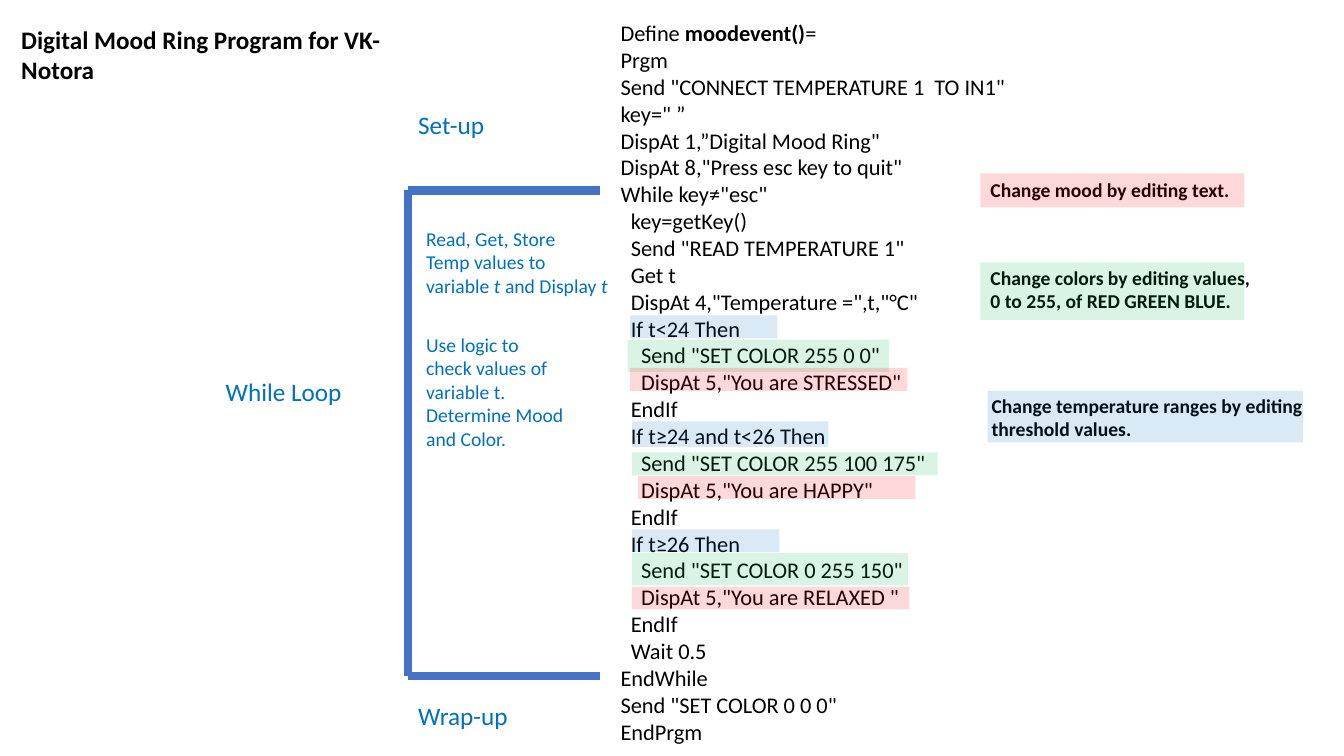
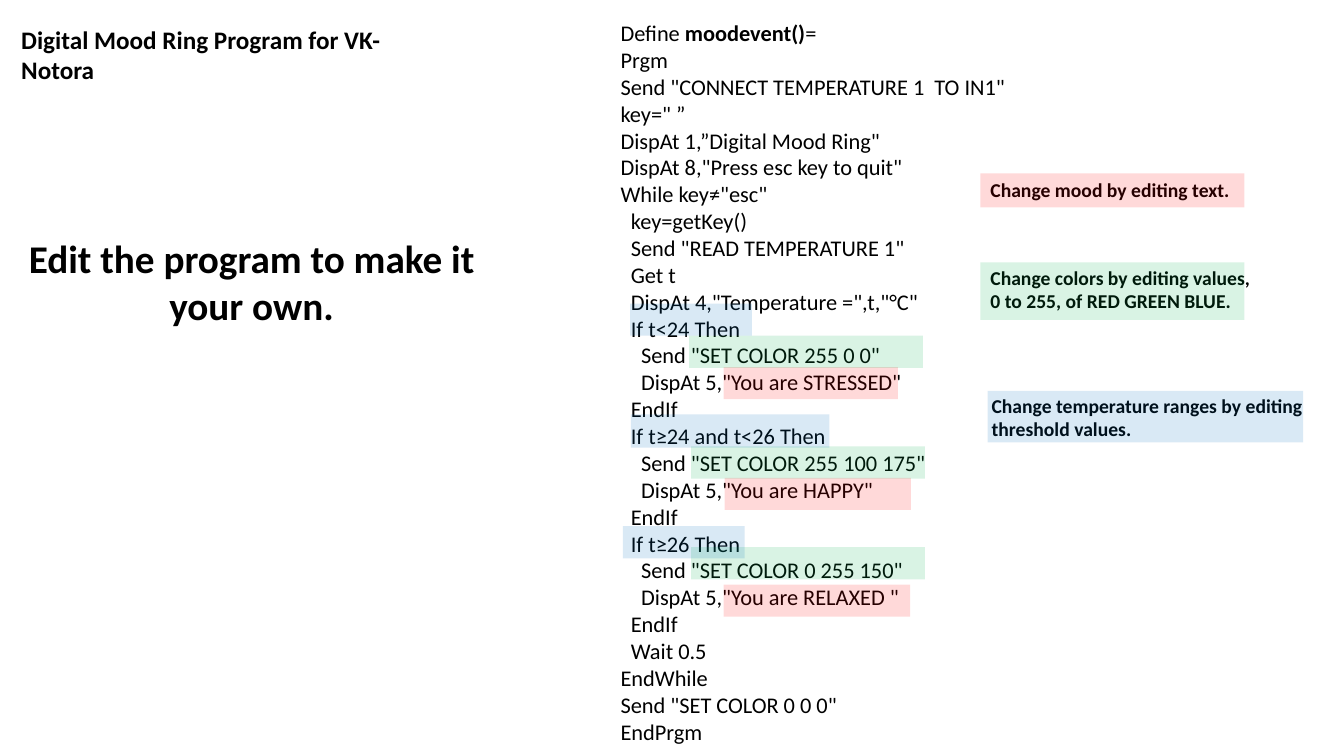
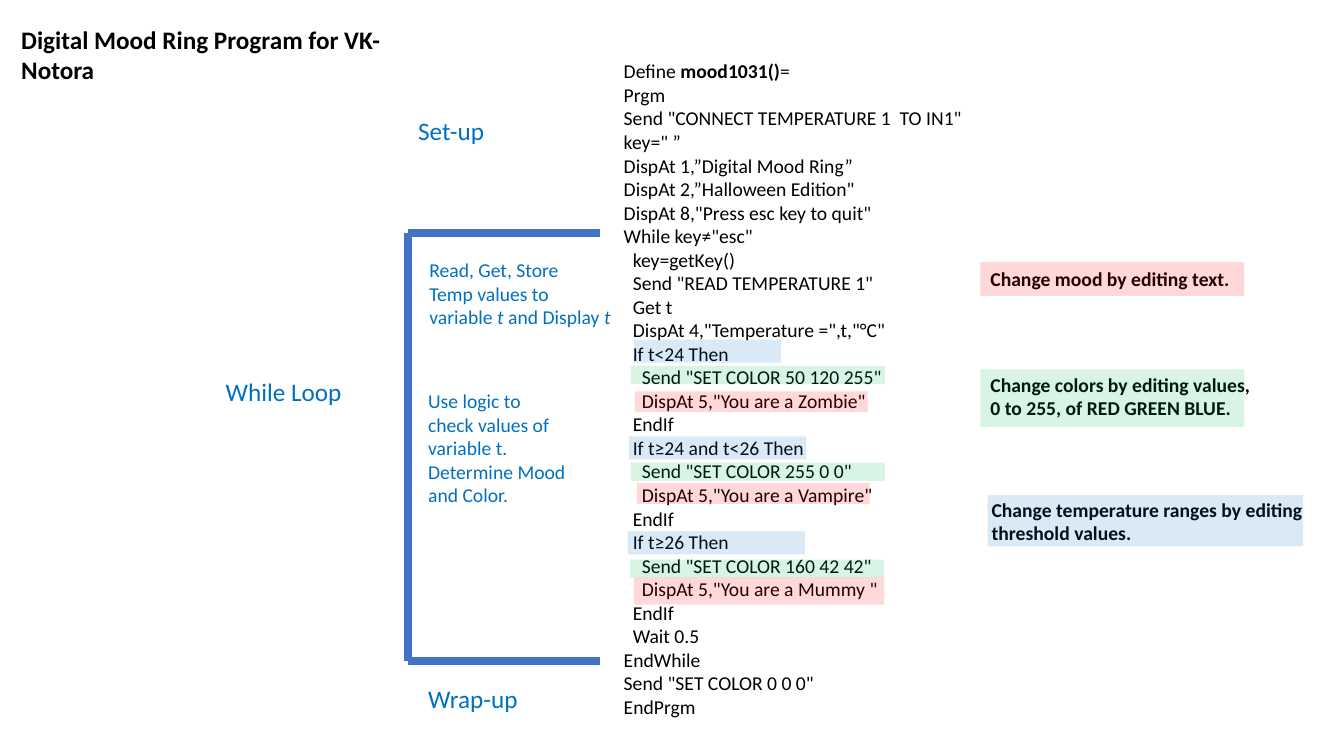
import pptx
import pptx.util
import pptx.dml.color
import pptx.enum.shapes
import pptx.enum.text
import pptx.oxml
import pptx.oxml.ns

Cm, Pt = pptx.util.Cm, pptx.util.Pt
Align = pptx.enum.text.PP_ALIGN

FONT = "Calibri"
BLACK, LABEL_BLUE, BRACKET_BLUE = "000000", "0070C0", "4472C4"
TINTS = {"mood": "FF0000", "color": "00B050", "range": "0070C0"}
TINT_OPACITY = 15
SPACE_WIDTH = 0.23  # width of one space, as a share of the font size

TITLE = "Digital Mood Ring Program for VK-Notora"
READ_TEXT = ["Read, Get, Store",
             ["Temp values to variable ", ("t ", "italic"),
              "and Display ", ("t", "italic")]]
LOGIC_TEXT = ["Use logic to check values of variable t.",
              "Determine Mood and Color."]


def rgb(value):
    return pptx.dml.color.RGBColor.from_string(value)


def write(frame, paragraphs, size=14, color=BLACK, bold=False,
          align=Align.LEFT, wrap=False):
    """Fill a frame; a paragraph is a string or a list of spans, and
    leading spaces become a left indent."""
    frame.word_wrap = wrap
    frame.auto_size = pptx.enum.text.MSO_AUTO_SIZE.NONE
    frame.vertical_anchor = pptx.enum.text.MSO_ANCHOR.TOP
    for number, content in enumerate(paragraphs):
        para = frame.paragraphs[0] if number == 0 else frame.add_paragraph()
        para.alignment = align
        para.space_before = Pt(0)
        if isinstance(content, str):
            text = content.lstrip()
            spaces = len(content) - len(text)
            if spaces:
                margin = Pt(size * SPACE_WIDTH * spaces)
                para._p.get_or_add_pPr().set("marL", str(int(margin)))
            content = [text]
        for part in content:
            text, style = (part, "") if isinstance(part, str) else part
            span = para.add_run()
            span.text = text
            span.font.name = FONT
            span.font.size = Pt(size)
            span.font.color.rgb = rgb(color)
            span.font.bold = bold or style == "bold"
            span.font.italic = style == "italic"


def program(name, displays, moods):
    """Lines of the program, with one If block for each mood."""
    lines = [["Define ", (name, "bold"), "="],
             "Prgm",
             'Send "CONNECT TEMPERATURE 1  TO IN1"',
             'key=" ”',
             *displays,
             'DispAt 8,"Press esc key to quit"',
             'While key≠"esc"',
             "  key=getKey()",
             '  Send "READ TEMPERATURE 1"',
             "  Get t",
             '  DispAt 4,"Temperature =",t,"°C"']
    tests = ["t<24", "t≥24 and t<26", "t≥26"]
    for test, (color, mood) in zip(tests, moods):
        lines += [f"  If {test} Then",
                  f'    Send "SET COLOR {color}"',
                  f'    DispAt 5,"You are {mood}"',
                  "  EndIf"]
    return lines + ["  Wait 0.5", "EndWhile", 'Send "SET COLOR 0 0 0"', "EndPrgm"]


class Board:
    """The deck, its style and the current slide."""

    def __init__(self):
        self.deck = pptx.Presentation()
        self.deck.slide_width = Cm(33.87)
        self.deck.slide_height = Cm(19.05)
        self.page = None

    def new_page(self):
        self.page = self.deck.slides.add_slide(self.deck.slide_layouts[5])
        title = self.page.shapes.title
        title.left, title.top = Cm(0.28), Cm(0.48)
        title.width, title.height = Cm(11.13), Cm(1.02)
        write(title.text_frame, [TITLE], size=18, bold=True)

    def text(self, left, top, width, height, paragraphs, **style):
        box = self.page.shapes.add_textbox(
            Cm(left), Cm(top), Cm(width), Cm(height))
        write(box.text_frame, paragraphs, **style)

    def label(self, left, top, width, text):
        self.text(left, top, width, 1.02, [text], size=18, color=LABEL_BLUE)

    def tint(self, kind, left, top, width, height):
        band = self.page.shapes.add_shape(
            pptx.enum.shapes.MSO_SHAPE.RECTANGLE,
            Cm(left), Cm(top), Cm(width), Cm(height))
        band.shadow.inherit = False
        band.line.fill.background()
        band.fill.solid()
        band.fill.fore_color.rgb = rgb(TINTS[kind])
        color = band._element.spPr.find(".//" + pptx.oxml.ns.qn("a:srgbClr"))
        alpha = color.makeelement(pptx.oxml.ns.qn("a:alpha"),
                                  {"val": str(TINT_OPACITY * 1000)})
        color.append(alpha)

    def tints(self, bands):
        for kind, places in bands.items():
            for place in places:
                self.tint(kind, *place)

    def line(self, x1, y1, x2, y2):
        line = self.page.shapes.add_connector(
            pptx.enum.shapes.MSO_CONNECTOR.STRAIGHT,
            Cm(x1), Cm(y1), Cm(x2), Cm(y2))
        line.line.color.rgb = rgb(BRACKET_BLUE)
        line.line.width = Pt(6)
        properties = line._element.spPr
        properties.append(
            properties.makeelement(pptx.oxml.ns.qn("a:effectLst"), {}))

    def bracket(self, top, bottom, left=10.29, right=15.11):
        self.line(right, top, left, top)
        self.line(right, bottom, left, bottom)
        self.line(left, bottom, left, top)

    def stages(self, bracket, setup, wrapup, read, logic):
        """Bracket and labels that name the parts of the program."""
        self.bracket(*bracket)
        self.label(5.44, 9.37, 3.48, "While Loop")
        self.label(*setup, 2.18, "Set-up")
        self.label(*wrapup, 2.79, "Wrap-up")
        self.text(*read, 5.18, 2.06, READ_TEXT, color=LABEL_BLUE, wrap=True)
        self.text(*logic, 3.99, 3.25, LOGIC_TEXT, color=LABEL_BLUE, wrap=True)

    def hints(self, mood_top, color_top, range_top):
        """Editing hints, each under a band in its own tint."""
        self.text(24.71, mood_top, 6.65, 0.86,
                  ["Change mood by editing text."], bold=True)
        self.tint("mood", 24.71, mood_top, 6.65, 0.86)
        self.text(24.71, color_top, 7.11, 1.45,
                  ["Change colors by editing values,",
                   "0 to 255, of RED GREEN BLUE."], bold=True)
        self.tint("color", 24.71, color_top + 0.04, 6.65, 1.45)
        self.text(24.74, range_top, 8.38, 1.45,
                  ["Change temperature ranges by editing",
                   "threshold values."], bold=True)
        self.tint("range", 24.89, range_top + 0.05, 7.95, 1.3)


def main():
    board = Board()
    mood_code = program(
        "moodevent()", ['DispAt 1,”Digital Mood Ring"'],
        [("255 0 0", "STRESSED"), ("255 100 175", "HAPPY"),
         ("0 255 150", "RELAXED ")])
    halloween_code = program(
        "mood1031()",
        ["DispAt 1,”Digital Mood Ring”", 'DispAt 2,”Halloween Edition"'],
        [("50 120 255", "a Zombie"), ("255 0 0", "a Vampire"),
         ("160 42 42", "a Mummy ")])
    code_place = (15.39, 0.36, 16.94, 19.41)

    # Slide 1: the parts of the program
    board.new_page()
    board.text(*code_place, mood_code, size=16, wrap=True)
    board.stages(bracket=(4.8, 17.04), setup=(10.29, 2.64),
                 wrapup=(10.29, 17.53), read=(10.49, 5.59),
                 logic=(10.49, 8.26))
    board.hints(4.37, 6.57, 9.8)
    board.tints({
        "range": [(15.88, 7.95, 3.71, 0.58), (15.93, 10.62, 4.95, 0.64),
                  (15.93, 13.34, 3.71, 0.58)],
        "color": [(15.82, 8.56, 6.58, 0.81), (15.93, 11.4, 7.7, 0.58),
                  (15.93, 13.94, 6.96, 0.81)],
        "mood": [(15.88, 9.27, 6.99, 0.58), (16.08, 11.99, 6.99, 0.58),
                 (15.93, 14.78, 6.99, 0.58)]})

    # Slide 2: the values to edit
    board.new_page()
    board.text(*code_place, mood_code, size=16, wrap=True)
    board.hints(4.37, 6.57, 9.8)
    board.tints({
        "mood": [(18.24, 9.25, 4.39, 0.81), (18.26, 12.04, 4.7, 0.81),
                 (18.24, 14.73, 4.7, 0.81)],
        "color": [(17.37, 8.46, 5.89, 0.81), (17.42, 11.25, 5.89, 0.81),
                  (17.42, 13.79, 5.89, 0.81)],
        "range": [(15.88, 7.65, 3.07, 0.81), (15.9, 10.44, 5, 0.84),
                  (15.7, 13.26, 3.07, 0.81)]})
    board.text(-0.1, 5.77, 12.88, 2.64,
               ["Edit the program to make it your own."],
               size=28, bold=True, align=Align.CENTER, wrap=True)

    # Slide 3: the Halloween edition
    board.new_page()
    board.text(15.47, 1.37, 16.94, 17.02, halloween_code, size=14, wrap=True)
    board.stages(bracket=(5.87, 16.66), setup=(10.29, 2.77),
                 wrapup=(10.54, 17.09), read=(10.57, 6.38),
                 logic=(10.54, 9.68))
    board.hints(6.6, 9.27, 12.42)
    board.tints({
        "mood": [(16, 9.86, 5.87, 0.53), (16.05, 12.17, 5.87, 0.53),
                 (15.98, 14.55, 6.3, 0.69)],
        "color": [(15.9, 9.22, 6.4, 0.46), (15.9, 11.66, 6.4, 0.46),
                  (15.88, 14.1, 6.4, 0.46)],
        "range": [(15.98, 8.56, 3.71, 0.58), (15.85, 11, 4.47, 0.58),
                  (15.82, 13.39, 4.47, 0.58)]})

    board.deck.save("out.pptx")


if __name__ == "__main__":
    main()
